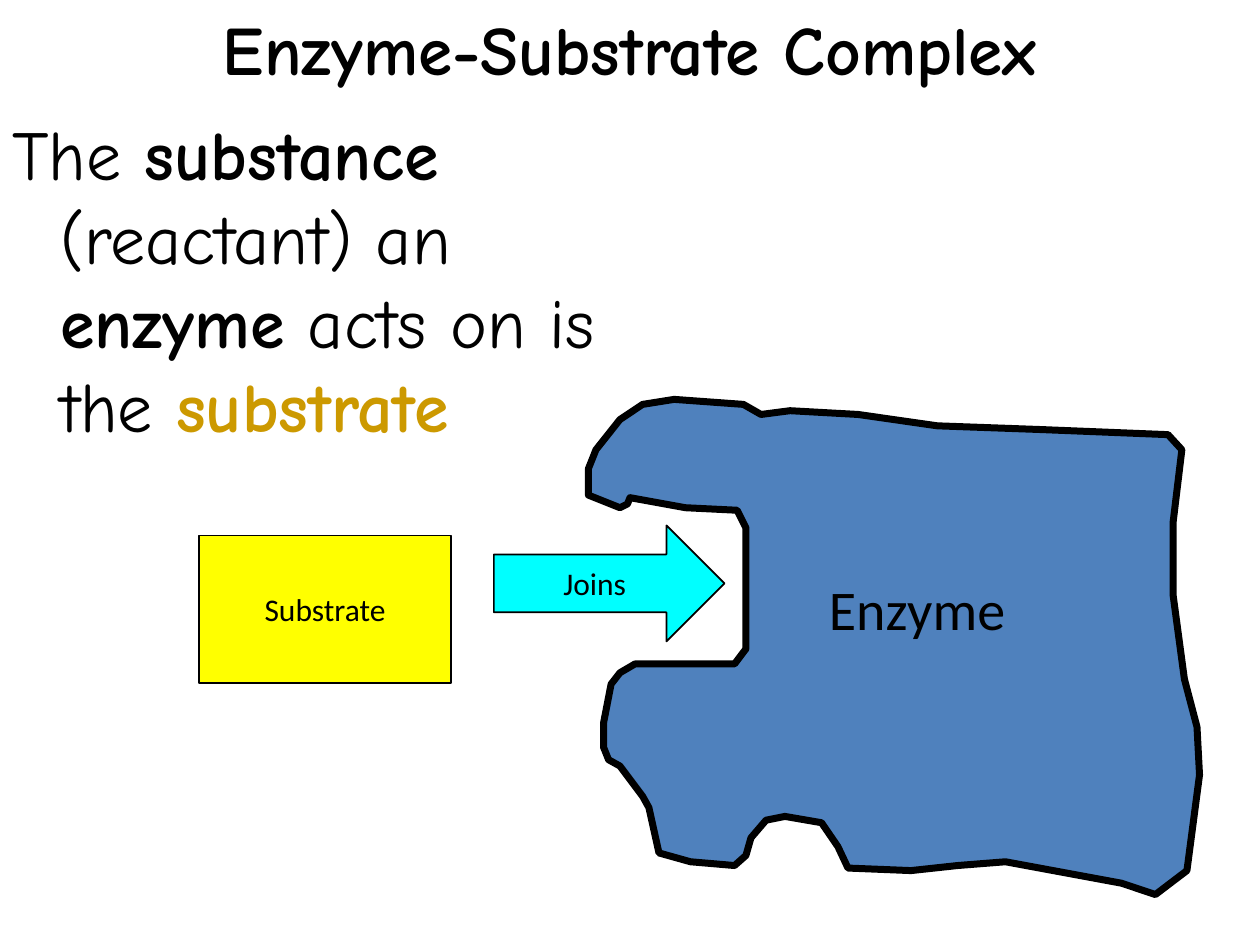
import pptx
import pptx.dml.color
import pptx.enum.shapes
import pptx.enum.text
import pptx.util

Inches = pptx.util.Inches
Pt = pptx.util.Pt
Shape = pptx.enum.shapes.MSO_SHAPE
Align = pptx.enum.text.PP_ALIGN
Anchor = pptx.enum.text.MSO_ANCHOR

BLACK = "000000"
GOLD = "CC9900"

ENZYME_OUTLINE = [
    (5, 3.95), (5.44, 4.03), (5.85, 4.05), (5.92, 4.19), (5.92, 5.15),
    (5.83, 5.27), (5.04, 5.27), (4.92, 5.34), (4.85, 5.43), (4.79, 5.74),
    (4.79, 5.93), (4.83, 6.03), (4.92, 6.08), (5.1, 6.32), (5.15, 6.41),
    (5.23, 6.77), (5.48, 6.84), (5.83, 6.87), (5.92, 6.79), (5.96, 6.65),
    (6.08, 6.51), (6.23, 6.48), (6.52, 6.53), (6.65, 6.72), (6.73, 6.89),
    (7.23, 6.91), (7.6, 6.87), (7.98, 6.84), (8.9, 7.01), (9.17, 7.1),
    (9.42, 6.91), (9.52, 6.15), (9.5, 5.77), (9.4, 5.39), (9.31, 4.72),
    (9.31, 4.15), (9.38, 3.57), (9.27, 3.45), (8.27, 3.41), (7.44, 3.38),
    (6.81, 3.29), (6.27, 3.26), (6.04, 3.29), (5.9, 3.21), (5.35, 3.17),
    (5.1, 3.21), (4.92, 3.33), (4.73, 3.57), (4.67, 3.72), (4.67, 3.93),
    (4.92, 4.03), (4.98, 4),
]


def color(hex_code):
    return pptx.dml.color.RGBColor.from_string(hex_code)


class SlideBuilder:
    heading_font = "Comic Neue"
    label_font = "Calibri"

    def __init__(self, prs):
        self.slide = prs.slides.add_slide(prs.slide_layouts[6])

    def format_run(self, r, font, size, bold=False, hex_code=BLACK):
        r.font.name = font
        r.font.size = Pt(size)
        r.font.bold = bold
        r.font.color.rgb = color(hex_code)

    def paint(self, sp, fill, line_width):
        sp.shadow.inherit = False
        sp.fill.solid()
        sp.fill.fore_color.rgb = color(fill)
        sp.line.color.rgb = color(BLACK)
        sp.line.width = Pt(line_width)

    def text(self, box, runs, font, size, align=Align.LEFT, anchor=Anchor.TOP, wrap=True):
        sp = self.slide.shapes.add_textbox(*map(Inches, box))
        tf = sp.text_frame
        tf.word_wrap = wrap
        tf.vertical_anchor = anchor
        p = tf.paragraphs[0]
        p.alignment = align
        for words, bold, hex_code in runs:
            r = p.add_run()
            r.text = words
            self.format_run(r, font, size, bold, hex_code)
        return p

    def title(self, box, words):
        self.text(box, [(words, True, BLACK)], self.heading_font, 39.6,
                  Align.CENTER, Anchor.MIDDLE)

    def body(self, box, runs):
        p = self.text(box, runs, self.heading_font, 40)
        p.space_before = Pt(8)
        pPr = p._p.get_or_add_pPr()
        pPr.set("marL", str(Inches(0.38)))
        pPr.set("indent", str(Inches(-0.38)))

    def label(self, box, words):
        self.text(box, [(words, False, BLACK)], self.label_font, 32, wrap=False)

    def outline(self, points, fill, line_width):
        corners = [(Inches(x), Inches(y)) for x, y in points]
        builder = self.slide.shapes.build_freeform(*corners[0])
        builder.add_line_segments(corners[1:], close=True)
        self.paint(builder.convert_to_shape(), fill, line_width)

    def shape(self, kind, box, fill, words):
        sp = self.slide.shapes.add_shape(kind, *map(Inches, box))
        self.paint(sp, fill, 1)
        tf = sp.text_frame
        tf.text = words
        tf.word_wrap = False
        tf.vertical_anchor = Anchor.MIDDLE
        p = tf.paragraphs[0]
        p.alignment = Align.CENTER
        self.format_run(p.runs[0], self.label_font, 18)


def main():
    prs = pptx.Presentation()
    prs.slide_width = Inches(10)
    prs.slide_height = Inches(7.5)

    s = SlideBuilder(prs)
    s.title((0, 0, 10, 0.75), "Enzyme-Substrate Complex")
    s.body((0, 0.83, 4.92, 5.33), [
        ("The ", False, BLACK),
        ("substance", True, BLACK),
        (" (reactant) an ", False, BLACK),
        ("enzyme", True, BLACK),
        (" acts on is the ", False, BLACK),
        ("substrate", True, GOLD),
    ])
    s.outline(ENZYME_OUTLINE, "4F81BD", 4)
    s.label((6.48, 4.51, 1.77, 0.63), "Enzyme")
    s.shape(Shape.RECTANGLE, (1.58, 4.25, 2, 1.17), "FFFF00", "Substrate")
    s.shape(Shape.RIGHT_ARROW, (3.92, 4.17, 1.83, 0.92), "00FFFF", "Joins")

    prs.save("out.pptx")


if __name__ == "__main__":
    main()
